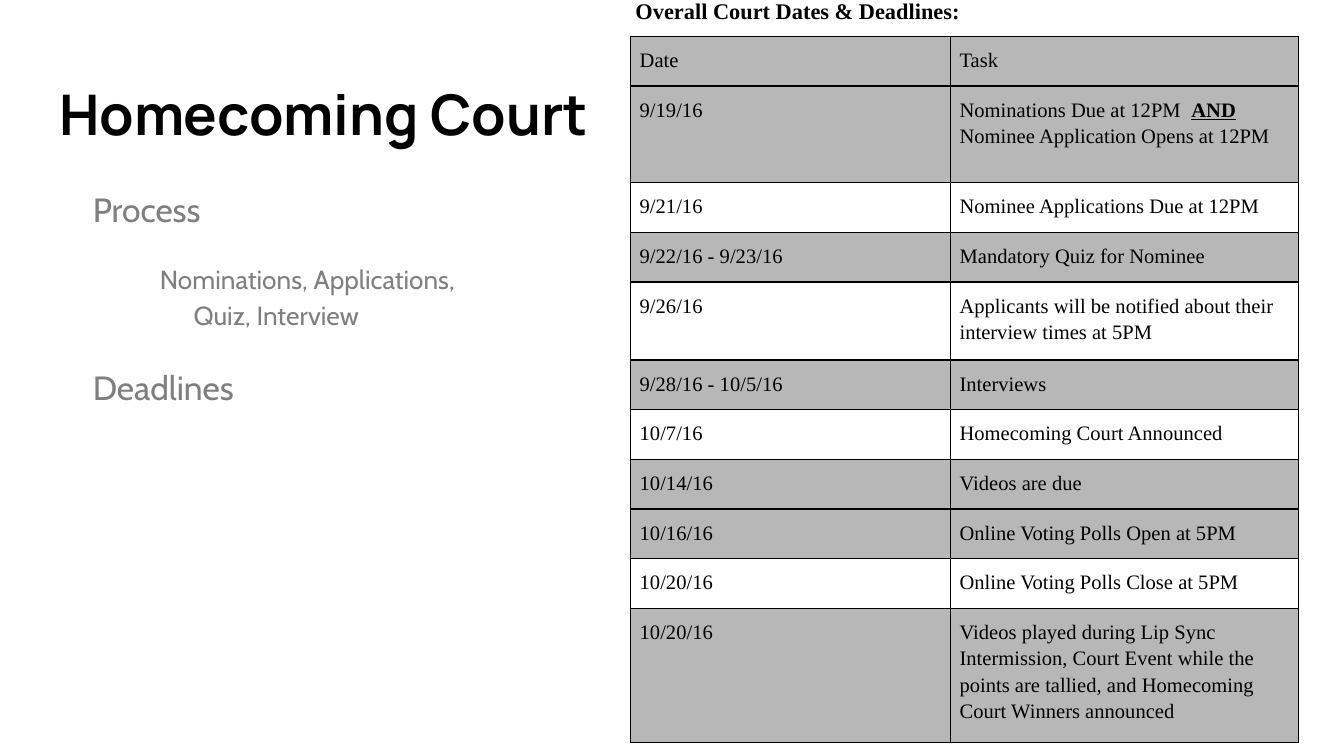
from pptx import Presentation
from pptx import util as u
from pptx.dml import color
from pptx.enum import text
from pptx.oxml import parse_xml
from pptx.oxml.ns import nsdecls

THEME = {
    "black": color.RGBColor.from_string("000000"),
    "muted": color.RGBColor.from_string("7F7F7F"),
    "shade": color.RGBColor.from_string("B7B7B7"),
    "border": "000000",
    "title": u.Pt(30), "topic": u.Pt(18), "detail": u.Pt(14),
    "heading": u.Pt(12), "cell": u.Pt(11),
}
TITLE_FONT = {"name": "Manrope", "size": THEME["title"], "bold": True}
HEADING_FONT = {"name": "Times New Roman", "size": THEME["heading"], "bold": True}
CELL_FONT = {"name": "Times New Roman", "size": THEME["cell"], "bold": False}
TABLE_SPACING = {"line_spacing": 1.15, "space_before": u.Pt(1)}
BODY_SPACING = {"line_spacing": 1.15, "space_before": u.Pt(0), "space_after": u.Pt(16)}


def apply(target, values):
    for name, value in values.items():
        setattr(target, name, value)


def add_span(para, words, font, ink):
    span = para.add_run()
    span.text = words
    apply(span.font, font)
    span.font.color.rgb = ink


# Widescreen page, 16 to 9
deck = Presentation()
deck.slide_width, deck.slide_height = u.Inches(10), u.Inches(10 * 9 / 16)
page = deck.slides.add_slide(deck.slide_layouts[1])

# Frames: title, list and table heading
title, body = page.placeholders
heading = page.shapes.add_textbox(0, 0, 0, 0)
top, middle = text.MSO_ANCHOR.TOP, text.MSO_ANCHOR.MIDDLE
for box, place, anchor in [
    (title, (0.34, 0.49, 9.32, 0.68), top),
    (body, (0.34, 1.26, 3.54, 3.74), top),
    (heading, (4.63, -1.58, 3.28, 3.28), middle),
]:
    apply(box, dict(zip(("left", "top", "width", "height"), map(u.Inches, place))))
    apply(box.text_frame, {"word_wrap": True, "auto_size": text.MSO_AUTO_SIZE.NONE,
                           "vertical_anchor": anchor})
    for side in ("left", "top", "right", "bottom"):
        setattr(box.text_frame, f"margin_{side}", u.Inches(0.1))

# Title
para = title.text_frame.paragraphs[0]
para.alignment = text.PP_ALIGN.LEFT
add_span(para, "Homecoming Court", TITLE_FONT, THEME["black"])

# Topic list
topics = [
    ("Process", 0, "topic"),
    ("Nominations, Applications, Quiz, Interview", 1, "detail"),
    ("Deadlines", 0, "topic"),
]
for index, (words, level, size) in enumerate(topics):
    frame = body.text_frame
    para = frame.add_paragraph() if index else frame.paragraphs[0]
    apply(para, {"level": level, "alignment": text.PP_ALIGN.LEFT, **BODY_SPACING})
    add_span(para, words, {"name": "Cabin", "size": THEME[size]}, THEME["muted"])
    props = para._p.get_or_add_pPr()
    props.set("marL", str(u.Inches(0.5 * (level + 1))))
    props.set("indent", str(u.Inches(-0.25)))
    props.append(parse_xml(f"<a:buNone {nsdecls('a')}/>"))

# Table heading
para = heading.text_frame.paragraphs[0]
apply(para, TABLE_SPACING)
add_span(para, "Overall Court Dates & Deadlines:", HEADING_FONT, THEME["black"])

# Schedule: date, task, row height, shaded; asterisks enclose emphasis
schedule = [
    ("Date", "Task", 0.37, True),
    ("9/19/16", "Nominations Due at 12PM  *AND* Nominee Application Opens at 12PM", 0.72, True),
    ("9/21/16", "Nominee Applications Due at 12PM", 0.37, False),
    ("9/22/16 - 9/23/16", "Mandatory Quiz for Nominee", 0.37, True),
    ("9/26/16", "Applicants will be notified about their interview times at 5PM", 0.58, False),
    ("9/28/16 - 10/5/16", "Interviews", 0.37, True),
    ("10/7/16", "Homecoming Court Announced", 0.37, False),
    ("10/14/16", "Videos are due", 0.37, True),
    ("10/16/16", "Online Voting Polls Open at 5PM", 0.37, True),
    ("10/20/16", "Online Voting Polls Close at 5PM", 0.37, False),
    ("10/20/16", "Videos played during Lip Sync Intermission, Court Event while the points "
                 "are tallied, and Homecoming Court Winners announced", 1, True),
]
widths = [2.38, 2.59]
table = page.shapes.add_table(
    len(schedule), len(widths), u.Inches(4.69), u.Inches(0.27),
    u.Inches(sum(widths)), u.Inches(sum(row[2] for row in schedule))).table
apply(table, {"first_row": False, "horz_banding": False})
for column, width in zip(table.columns, widths):
    column.width = u.Inches(width)

for row, (date, task, height, shaded) in zip(table.rows, schedule):
    row.height = u.Inches(height)
    for cell, words in zip(row.cells, (date, task)):
        for side in ("left", "top", "right", "bottom"):
            setattr(cell, f"margin_{side}", u.Inches(0.07))
        para = cell.text_frame.paragraphs[0]
        apply(para, TABLE_SPACING)
        for part, piece in enumerate(words.split("*")):
            strong = part % 2 == 1
            font = {**CELL_FONT, "bold": strong, "underline": strong}
            add_span(para, piece, font, THEME["black"])

        # Borders come before the fill in the cell properties
        props = cell._tc.get_or_add_tcPr()
        for edge in ("lnL", "lnR", "lnT", "lnB"):
            props.append(parse_xml(
                f'<a:{edge} {nsdecls("a")} w="{u.Pt(0.75)}"><a:solidFill>'
                f'<a:srgbClr val="{THEME["border"]}"/></a:solidFill></a:{edge}>'))
        if shaded:
            cell.fill.solid()
            cell.fill.fore_color.rgb = THEME["shade"]
        else:
            cell.fill.background()

deck.save("out.pptx")
